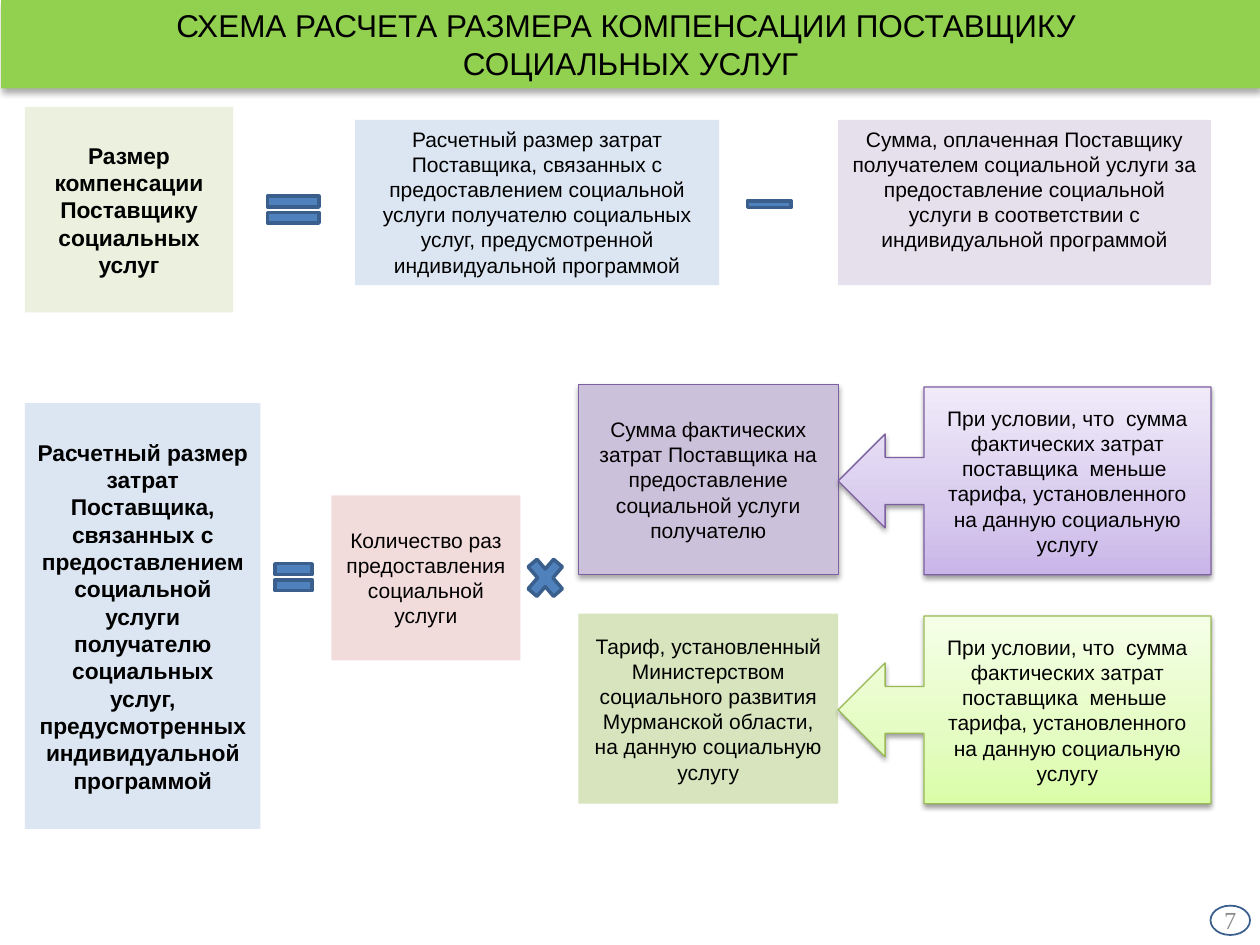
from dataclasses import dataclass

from lxml import etree
from pptx import Presentation
from pptx.dml import color as dml
from pptx.enum import shapes as kinds, text as txt
from pptx.oxml import ns
from pptx.util import Pt


@dataclass(frozen=True)
class Theme:
    font: str = "Arial"
    number_font: str = "Times New Roman"
    title_size: float = 18
    lead_size: float = 13
    body_size: float = 12
    number_size: float = 14
    ink: str = "000000"
    number_ink: str = "8C8C8C"
    banner: str = "92D050"
    pale_green: str = "EBF1DE"
    green: str = "D7E4BD"
    blue: str = "DCE6F2"
    lilac: str = "E6E0EC"
    violet: str = "CCC1DA"
    pink: str = "F2DCDB"
    sign: str = "4F81BD"
    sign_edge: str = "3A5F8C"
    violet_edge: str = "7D60A0"
    green_edge: str = "98B955"
    violet_fade: tuple = ((0, "C9B5E8"), (35, "D8CBEE"), (100, "F0EAF9"))
    green_fade: tuple = ((0, "DAFDA7"), (35, "E4FCC2"), (100, "F5FFE7"))


THEME = Theme()
SHAPE = kinds.MSO_SHAPE
MIDDLE, TOP = txt.MSO_ANCHOR.MIDDLE, txt.MSO_ANCHOR.TOP
CENTER, RIGHT = txt.PP_ALIGN.CENTER, txt.PP_ALIGN.RIGHT


def rgb(code):
    return dml.RGBColor.from_string(code)


def child(parent, tag, **attributes):
    values = {name: str(value) for name, value in attributes.items()}
    return etree.SubElement(parent, ns.qn(tag), values)


def cast_shadow(shape, opacity, blur, distance):
    shape.shadow.inherit = False
    effects = shape._element.spPr.find(ns.qn("a:effectLst"))
    shadow = child(effects, "a:outerShdw", blurRad=Pt(blur), dist=Pt(distance),
                   dir=90 * 60000, rotWithShape=0)
    tint = child(shadow, "a:srgbClr", val="000000")
    child(tint, "a:alpha", val=opacity * 1000)


def fade_upwards(shape, stops):
    shape.fill.gradient()
    gradient = shape._element.spPr.find(ns.qn("a:gradFill"))
    for part in list(gradient):
        gradient.remove(part)
    stop_list = child(gradient, "a:gsLst")
    for position, code in stops:
        stop = child(stop_list, "a:gs", pos=position * 1000)
        child(stop, "a:srgbClr", val=code)
    child(gradient, "a:lin", ang=270 * 60000, scaled=0)


def write(shape, lines, size, font=THEME.font, ink=THEME.ink, bold=False,
          align=CENTER, anchor=MIDDLE):
    frame = shape.text_frame
    frame.word_wrap = True
    frame.auto_size = txt.MSO_AUTO_SIZE.NONE
    frame.vertical_anchor = anchor
    paragraph = frame.paragraphs[0]
    paragraph.alignment = align
    for index, line in enumerate(lines):
        if index:
            paragraph.add_line_break()
        run = paragraph.add_run()
        run.text = line
        run.font.name = font
        run.font.size = Pt(size)
        run.font.bold = bold
        run.font.color.rgb = rgb(ink)


def add_figure(slide, kind, box, fill=None, edge=None, edge_width=0.75):
    figure = slide.shapes.add_shape(kind, *map(Pt, box))
    figure.shadow.inherit = False
    if fill:
        figure.fill.solid()
        figure.fill.fore_color.rgb = rgb(fill)
    else:
        figure.fill.background()
    if edge:
        figure.line.color.rgb = rgb(edge)
        figure.line.width = Pt(edge_width)
    else:
        figure.line.fill.background()
    return figure


def add_term(slide, box, fill, wording, size=THEME.body_size, bold=False,
             anchor=MIDDLE, edge=None):
    term = add_figure(slide, SHAPE.RECTANGLE, box, fill, edge)
    write(term, [wording], size, bold=bold, anchor=anchor)
    return term


def add_sign(slide, kind, box):
    add_figure(slide, kind, box, THEME.sign, THEME.sign_edge, 2)


def add_condition(slide, top, stops, edge, wording):
    condition = add_figure(slide, SHAPE.LEFT_ARROW_CALLOUT, (479, top, 213, 107.3), edge=edge)
    for index, share in enumerate((0.25, 0.25, 0.25, 0.77)):
        condition.adjustments[index] = share
    fade_upwards(condition, stops)
    cast_shadow(condition, 38, 3.1, 1.6)
    write(condition, [wording], THEME.body_size)


def add_title(slide, lines):
    title = slide.shapes.title
    title.left, title.top, title.width, title.height = map(Pt, (0.7, 0, 719.3, 50.6))
    title.fill.solid()
    title.fill.fore_color.rgb = rgb(THEME.banner)
    cast_shadow(title, 32, 3.5, 2.2)
    frame = title.text_frame
    frame.margin_left = frame.margin_right = frame.margin_top = frame.margin_bottom = Pt(3)
    write(title, lines, THEME.title_size)


def add_page_number(slide, number):
    label = slide.shapes.add_textbox(*map(Pt, (669.6, 511.2, 44, 28.8)))
    write(label, [number], THEME.number_size, THEME.number_font, THEME.number_ink, align=RIGHT)
    add_figure(slide, SHAPE.OVAL, (691.7, 517.5, 22.6, 16.8), edge=THEME.sign_edge, edge_width=1)


def add_compensation_formula(slide):
    add_term(slide, (14.2, 61.2, 119, 117.4), THEME.pale_green,
             "Размер компенсации Поставщику социальных услуг", THEME.lead_size, bold=True)
    add_sign(slide, SHAPE.MATH_EQUAL, (147.6, 106.8, 40, 26))
    add_term(slide, (203, 68.6, 208, 94.4), THEME.blue,
             "Расчетный размер затрат Поставщика, связанных с предоставлением социальной "
             "услуги получателю социальных услуг, предусмотренной индивидуальной программой",
             anchor=TOP)
    add_sign(slide, SHAPE.MATH_MINUS, (422.6, 108.5, 34, 16.5))
    add_term(slide, (479, 68.6, 213, 94.4), THEME.lilac,
             "Сумма, оплаченная Поставщику получателем социальной услуги за предоставление "
             "социальной услуги в соответствии с индивидуальной программой", anchor=TOP)


def add_cost_formula(slide):
    add_term(slide, (14.2, 230.4, 134.7, 243.3), THEME.blue,
             "Расчетный размер затрат Поставщика, связанных с предоставлением социальной "
             "услуги получателю социальных услуг, предусмотренных индивидуальной программой",
             THEME.lead_size, bold=True)
    add_sign(slide, SHAPE.MATH_EQUAL, (153.4, 316.8, 28.8, 26))
    add_term(slide, (189.4, 283, 108, 94.3), THEME.pink,
             "Количество раз предоставления социальной услуги")
    add_sign(slide, SHAPE.MATH_MULTIPLY, (297.6, 314, 28, 32.4))
    actual_costs = add_term(
        slide, (330.5, 219.6, 148.5, 108.7), THEME.violet,
        "Сумма фактических затрат Поставщика на предоставление социальной услуги получателю",
        edge=THEME.violet_edge)
    cast_shadow(actual_costs, 35, 3.1, 1.8)
    add_term(slide, (330.5, 350.6, 148.5, 108.7), THEME.green,
             "Тариф, установленный Министерством социального развития Мурманской области, "
             "на данную социальную услугу")
    condition = ("При условии, что  сумма фактических затрат поставщика  меньше  тарифа, "
                 "установленного на данную социальную услугу")
    add_condition(slide, 221.2, THEME.violet_fade, THEME.violet_edge, condition)
    add_condition(slide, 352, THEME.green_fade, THEME.green_edge, condition)


def main():
    deck = Presentation()
    deck.slide_width, deck.slide_height = Pt(720), Pt(540)
    slide = deck.slides.add_slide(deck.slide_layouts[5])
    add_title(slide, ["СХЕМА РАСЧЕТА РАЗМЕРА КОМПЕНСАЦИИ ПОСТАВЩИКУ ", "СОЦИАЛЬНЫХ УСЛУГ"])
    add_compensation_formula(slide)
    add_cost_formula(slide)
    add_page_number(slide, "7")
    deck.save("out.pptx")


if __name__ == "__main__":
    main()
